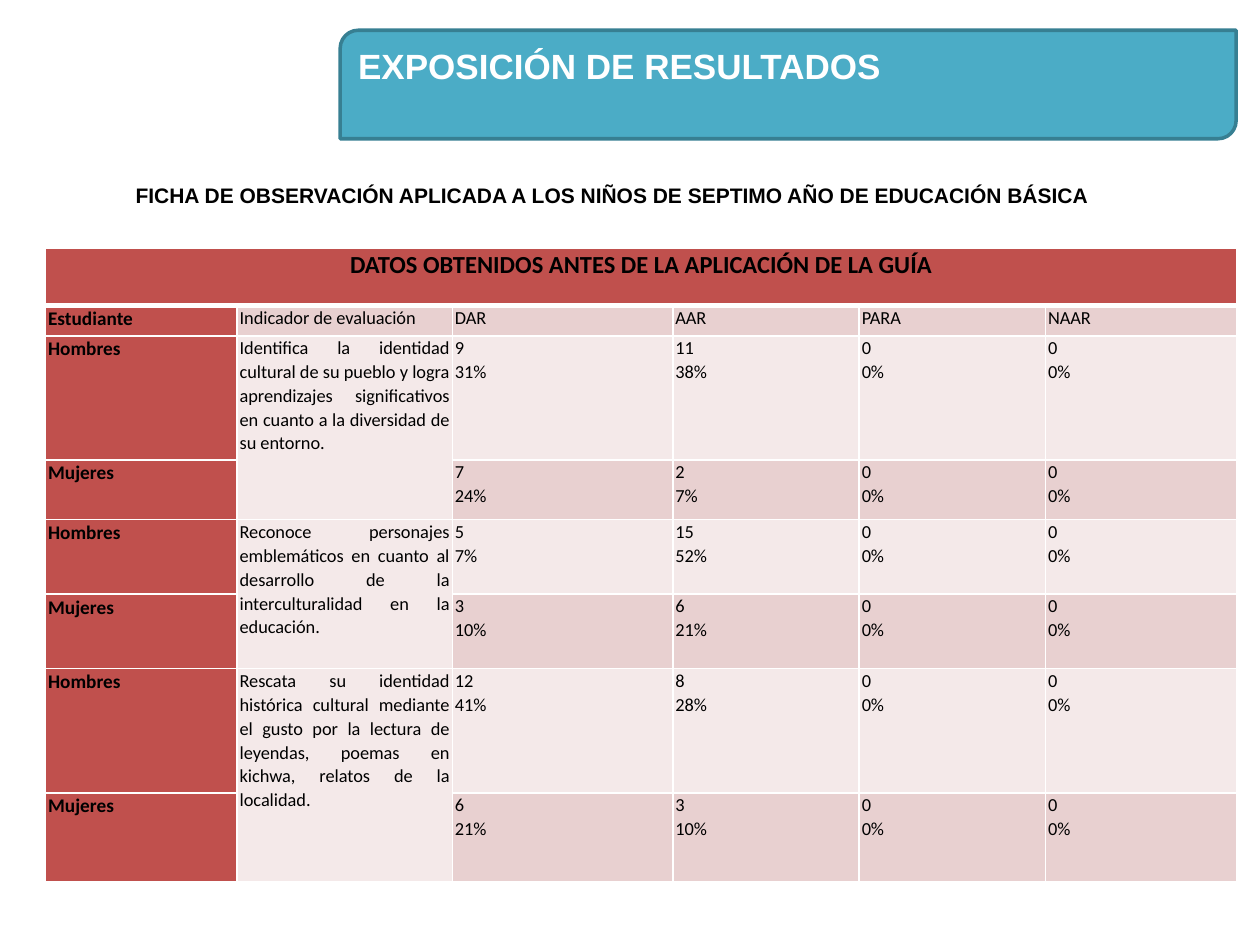
from dataclasses import dataclass

from lxml import etree
from pptx import Presentation
from pptx.dml.color import RGBColor
from pptx.enum.shapes import MSO_SHAPE
from pptx.enum.text import MSO_ANCHOR, MSO_AUTO_SIZE, PP_ALIGN
from pptx.oxml.ns import qn
from pptx.util import Pt

LEFT, CENTER, JUSTIFY = PP_ALIGN.LEFT, PP_ALIGN.CENTER, PP_ALIGN.JUSTIFY
TOP = MSO_ANCHOR.TOP
FIXED = MSO_AUTO_SIZE.NONE
BANNER = MSO_SHAPE.ROUND_2_DIAG_RECTANGLE
TITLE_ONLY = 5


@dataclass(frozen=True)
class Theme:
    heading_font: str = "Arial"
    table_font: str = "Calibri"
    black: str = "000000"
    white: str = "FFFFFF"
    teal: str = "4BACC6"
    teal_edge: str = "377F92"
    red: str = "C0504D"
    pink: str = "E8D0D0"
    pale: str = "F4E9E9"
    title_size: float = 20
    subtitle_size: float = 12
    caption_size: float = 14
    student_size: float = 11
    body_size: float = 10.5
    table_spacing: float = 1.07


THEME = Theme()

COLUMN_WIDTHS = [109.5, 123, 126, 106.5, 106.5, 109.5]
ROW_HEIGHTS = [32.6, 17.3, 70.9, 34.2, 42.5, 42.7, 70.9, 50.7]
CAPTION = "DATOS OBTENIDOS ANTES DE LA APLICACIÓN DE LA GUÍA"
HEADINGS = ["Estudiante", "Indicador de evaluación", "DAR", "AAR", "PARA", "NAAR"]
STUDENTS = ["Hombres", "Mujeres"]
# Each indicator with its counts and percentages, men first, then women
INDICATORS = [
    ("Identifica la identidad cultural de su pueblo y logra aprendizajes "
     "significativos en cuanto a la diversidad de su entorno.",
     [["9\n31%", "11\n38%", "0\n0%", "0\n0%"],
      ["7\n24%", "2\n7%", "0\n0%", "0\n0%"]]),
    ("Reconoce personajes emblemáticos en cuanto al desarrollo de la "
     "interculturalidad en la educación.",
     [["5\n7%", "15\n52%", "0\n0%", "0\n0%"],
      ["3\n10%", "6\n21%", "0\n0%", "0\n0%"]]),
    ("Rescata su identidad histórica cultural mediante el gusto por la lectura "
     "de leyendas, poemas en kichwa, relatos de la localidad.",
     [["12\n41%", "8\n28%", "0\n0%", "0\n0%"],
      ["6\n21%", "3\n10%", "0\n0%", "0\n0%"]]),
]


def rgb(color):
    return RGBColor.from_string(color)


def write(frame, text, *, size, font, color=THEME.black, bold=False,
          align=LEFT, spacing=1.0):
    frame.text = text
    for paragraph in frame.paragraphs:
        paragraph.alignment = align
        paragraph.line_spacing = spacing
        for run in paragraph.runs:
            run.font.size = Pt(size)
            run.font.name = font
            run.font.bold = bold
            run.font.color.rgb = rgb(color)


def add_banner(slide, left, top, width, height):
    banner = slide.shapes.add_shape(BANNER, Pt(left), Pt(top), Pt(width), Pt(height))
    banner.shadow.inherit = False
    banner.fill.solid()
    banner.fill.fore_color.rgb = rgb(THEME.teal)
    banner.line.color.rgb = rgb(THEME.teal_edge)
    banner.line.width = Pt(2)

    # The title lies over the banner
    title = slide.shapes.title
    title.left, title.top = Pt(left), Pt(top)
    title.width, title.height = Pt(width), Pt(height)
    slide.shapes._spTree.append(title._element)
    frame = title.text_frame
    frame.auto_size = FIXED
    frame.vertical_anchor = TOP
    frame.margin_left, frame.margin_top = Pt(10.2), Pt(8)
    write(frame, "EXPOSICIÓN DE RESULTADOS", size=THEME.title_size,
          font=THEME.heading_font, color=THEME.white, bold=True)


def add_subtitle(slide, left, top, width, height):
    subtitle = slide.shapes.add_textbox(Pt(left), Pt(top), Pt(width), Pt(height))
    subtitle.text_frame.word_wrap = True
    write(subtitle.text_frame,
          "FICHA DE OBSERVACIÓN APLICADA A LOS NIÑOS DE SEPTIMO AÑO DE EDUCACIÓN BÁSICA",
          size=THEME.subtitle_size, font=THEME.heading_font, bold=True,
          align=CENTER, spacing=1.5)


def style_cell(cell, fill, top_edge, bottom_edge):
    cell.margin_left = cell.margin_right = Pt(1.5)
    cell.margin_top = cell.margin_bottom = 0
    properties = cell._tc.get_or_add_tcPr()
    for side, weight in zip("LRTB", (1, 1, top_edge, bottom_edge)):
        edge = etree.SubElement(properties, qn(f"a:ln{side}"), w=str(Pt(weight)))
        paint = etree.SubElement(edge, qn("a:solidFill"))
        etree.SubElement(paint, qn("a:srgbClr"), val=THEME.white)
    cell.fill.solid()
    cell.fill.fore_color.rgb = rgb(fill)


def add_results_table(slide, left, top):
    table = slide.shapes.add_table(
        len(ROW_HEIGHTS), len(COLUMN_WIDTHS), Pt(left), Pt(top),
        Pt(sum(COLUMN_WIDTHS)), Pt(sum(ROW_HEIGHTS))).table
    for column, width in zip(table.columns, COLUMN_WIDTHS):
        column.width = Pt(width)
    for row, height in zip(table.rows, ROW_HEIGHTS):
        row.height = Pt(height)

    # Fills alternate by row; the student and indicator columns keep theirs
    for r in range(len(ROW_HEIGHTS)):
        for c in range(len(COLUMN_WIDTHS)):
            if r == 0 or c == 0:
                fill = THEME.red
            elif r > 1 and (c == 1 or r % 2 == 0):
                fill = THEME.pale
            else:
                fill = THEME.pink
            style_cell(table.cell(r, c), fill, 3 if r == 1 else 1, 3 if r == 0 else 1)

    def fill_text(r, c, text):
        student = c == 0
        write(table.cell(r, c).text_frame, text, font=THEME.table_font,
              size=THEME.student_size if student else THEME.body_size,
              bold=student, align=JUSTIFY, spacing=THEME.table_spacing)

    # Caption and column headings
    table.cell(0, 0).merge(table.cell(0, len(COLUMN_WIDTHS) - 1))
    write(table.cell(0, 0).text_frame, CAPTION, size=THEME.caption_size,
          font=THEME.table_font, bold=True, align=CENTER, spacing=THEME.table_spacing)
    for c, heading in enumerate(HEADINGS):
        fill_text(1, c, heading)

    # Two rows for each indicator
    for i, (indicator, results) in enumerate(INDICATORS):
        first = 2 + 2 * i
        table.cell(first, 1).merge(table.cell(first + 1, 1))
        fill_text(first, 1, indicator)
        for r, (student, values) in enumerate(zip(STUDENTS, results), first):
            fill_text(r, 0, student)
            for c, value in enumerate(values, 2):
                fill_text(r, c, value)


def main():
    deck = Presentation()
    deck.slide_width, deck.slide_height = Pt(720), Pt(540)
    slide = deck.slides.add_slide(deck.slide_layouts[TITLE_ONLY])
    add_subtitle(slide, 26, 93.6, 648, 26.6)
    add_banner(slide, 194.4, 17.3, 512, 62)
    add_results_table(slide, 26, 142)
    deck.save("out.pptx")


if __name__ == "__main__":
    main()
